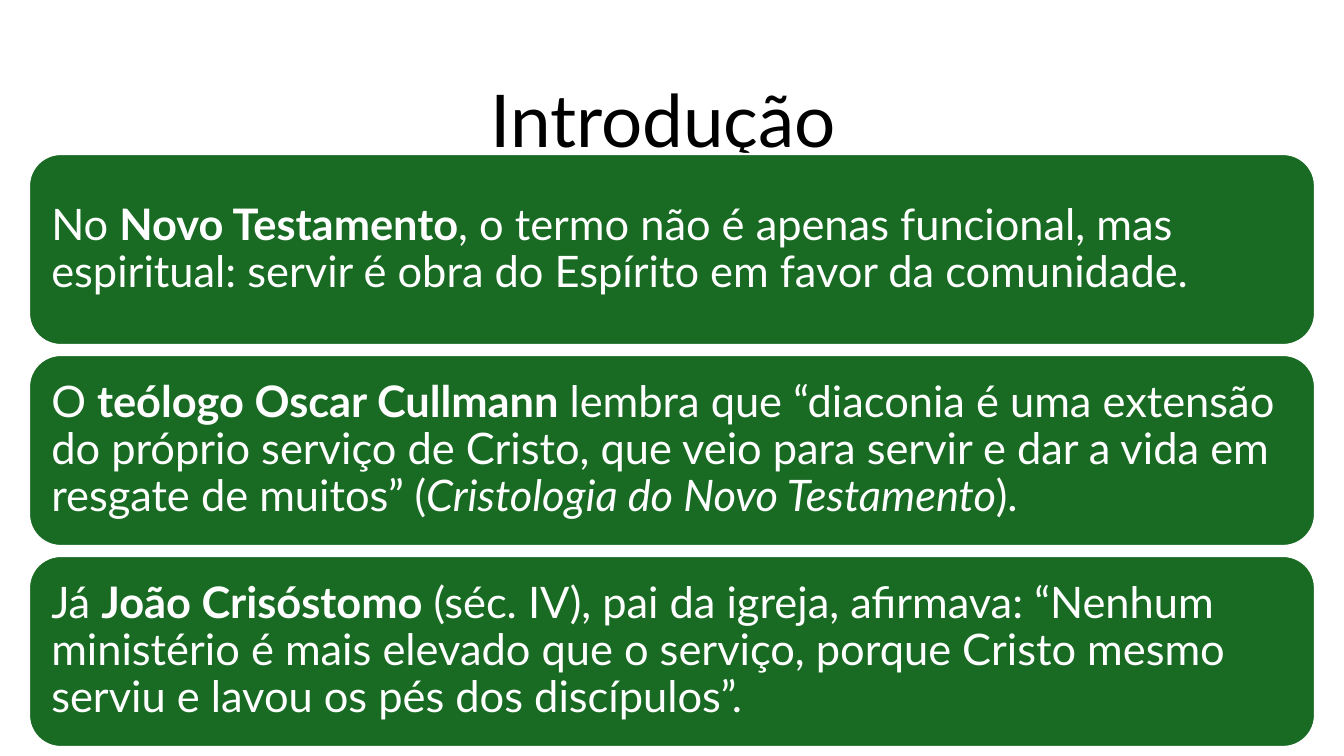
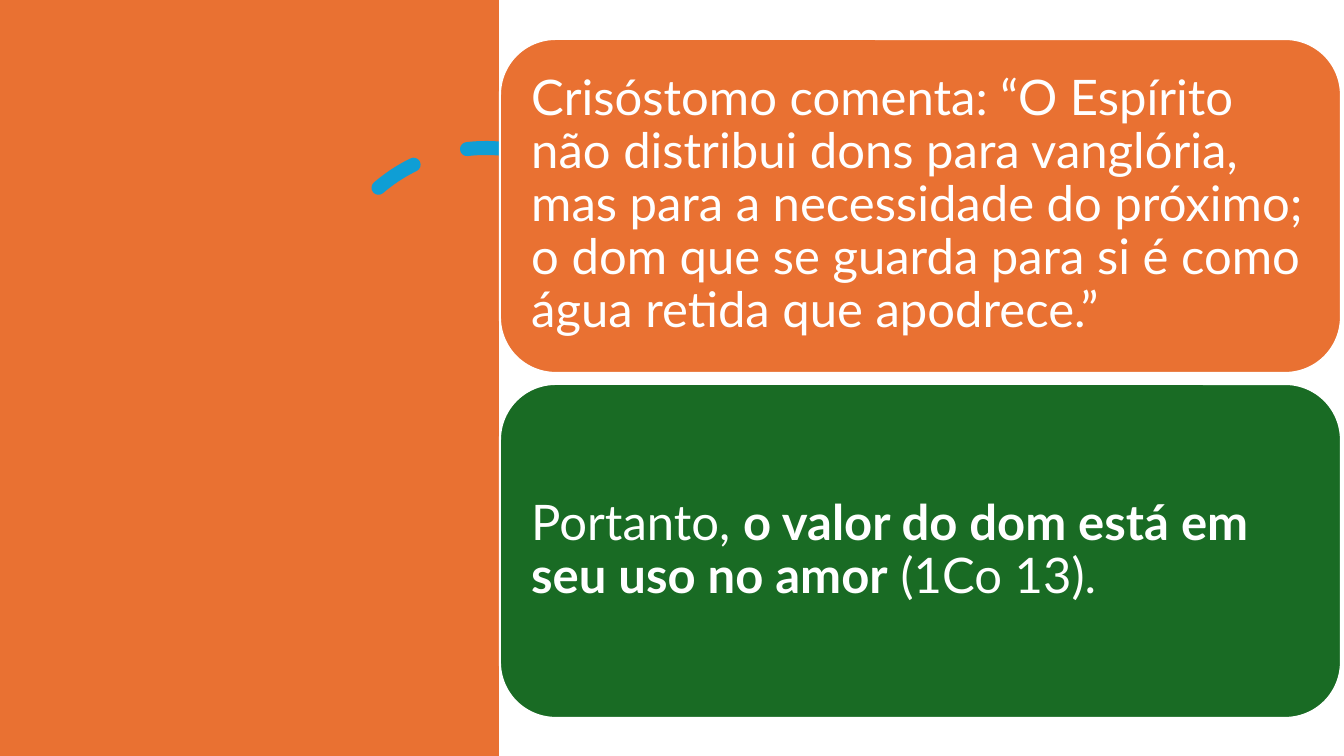
from dataclasses import dataclass

from pptx import Presentation
from pptx.dml.color import RGBColor as RGB
from pptx.enum.dml import MSO_LINE as DASH
from pptx.enum.shapes import MSO_SHAPE as SHAPE
from pptx.enum.text import MSO_ANCHOR as ANCHOR, PP_ALIGN as ALIGN
from pptx.util import Pt

PX = 914400 / 100.8


@dataclass(frozen=True)
class Theme:
    font: str = "Lato"
    white: RGB = RGB(0xFF, 0xFF, 0xFF)
    black: RGB = RGB(0x00, 0x00, 0x00)
    green: RGB = RGB(0x19, 0x6B, 0x24)
    orange: RGB = RGB(0xE9, 0x71, 0x32)
    blue: RGB = RGB(0x0F, 0x9E, 0xD5)
    title_size: int = 52
    intro_size: int = 31
    quote_size: int = 35
    spacing: float = 0.9
    outline: float = 1.5
    arc_width: int = 10


T = Theme()


def px(*lengths):
    return [round(n * PX) for n in lengths]


def write(shape, runs, size, color, align, inset):
    tf = shape.text_frame
    tf.word_wrap = True
    tf.vertical_anchor = ANCHOR.MIDDLE
    tf.margin_left, tf.margin_top, tf.margin_right, tf.margin_bottom = px(*[inset] * 4)
    p = tf.paragraphs[0]
    p.alignment = align
    p.line_spacing = T.spacing
    for text, style in runs:
        r = p.add_run()
        r.text = text
        r.font.name = T.font
        r.font.size = Pt(size)
        r.font.color.rgb = color
        r.font.bold = style == "bold"
        r.font.italic = style == "italic"


prs = Presentation()
prs.slide_width, prs.slide_height = px(1344, 756)
blank = prs.slide_layouts[6]
intro = prs.slides.add_slide(blank)
quote = prs.slides.add_slide(blank)

title = intro.shapes.add_textbox(*px(93, 61, 1159, 125))
write(title, [("Introdução ", "")], T.title_size, T.black, ALIGN.CENTER, 10)

panel = quote.shapes.add_shape(SHAPE.RECTANGLE, *px(0, 0, 499, 756))
panel.shadow.inherit = False
panel.fill.solid()
panel.fill.fore_color.rgb = T.orange
panel.line.fill.background()

arc = quote.shapes.add_shape(SHAPE.ARC, *px(321, 148, 330, 330))
arc.shadow.inherit = False
arc.rotation = 345.8
arc.adjustments[0] = 146.13
arc.adjustments[1] = 0
arc.fill.background()
arc.line.color.rgb = T.blue
arc.line.width = Pt(T.arc_width)
arc.line.dash_style = DASH.DASH
arc.line._get_or_add_ln().set("cap", "rnd")

intro_cards = [
    (T.green, [
        ("No ", ""),
        ("Novo Testamento", "bold"),
        (", o termo não é apenas funcional, mas espiritual: servir é obra do "
         "Espírito em favor da comunidade.", ""),
    ]),
    (T.green, [
        ("O ", ""),
        ("teólogo Oscar Cullmann", "bold"),
        (" lembra que “diaconia é uma extensão do próprio serviço de Cristo, que "
         "veio para servir e dar a vida em resgate de muitos” (", ""),
        ("Cristologia do Novo Testamento", "italic"),
        (").", ""),
    ]),
    (T.green, [
        ("Já ", ""),
        ("João Crisóstomo", "bold"),
        (" (séc. IV), pai da igreja, afirmava: “Nenhum ministério é mais elevado "
         "que o serviço, porque Cristo mesmo serviu e lavou os pés dos discípulos”.", ""),
    ]),
]
quote_cards = [
    (T.orange, [
        ("Crisóstomo comenta: “O Espírito não distribui dons para vanglória, mas "
         "para a necessidade do próximo; o dom que se guarda para si é como água "
         "retida que apodrece.”", ""),
    ]),
    (T.green, [
        ("Portanto, ", ""),
        ("o valor do dom está em seu uso no amor", "bold"),
        (" (1Co 13).", ""),
    ]),
]
stacks = [
    (intro, intro_cards, (29, 154, 1286, 191), 10, T.intro_size, 13),
    (quote, quote_cards, (500, 39, 841, 334), 11, T.quote_size, 15),
]
for s, cards, (left, top, width, height), gap, size, inset in stacks:
    for i, (color, runs) in enumerate(cards):
        y = top + i * (height + gap)
        card = s.shapes.add_shape(SHAPE.ROUNDED_RECTANGLE, *px(left, y, width, height))
        card.shadow.inherit = False
        card.fill.solid()
        card.fill.fore_color.rgb = color
        card.line.color.rgb = T.white
        card.line.width = Pt(T.outline)
        write(card, runs, size, T.white, ALIGN.LEFT, inset)

prs.save("out.pptx")
